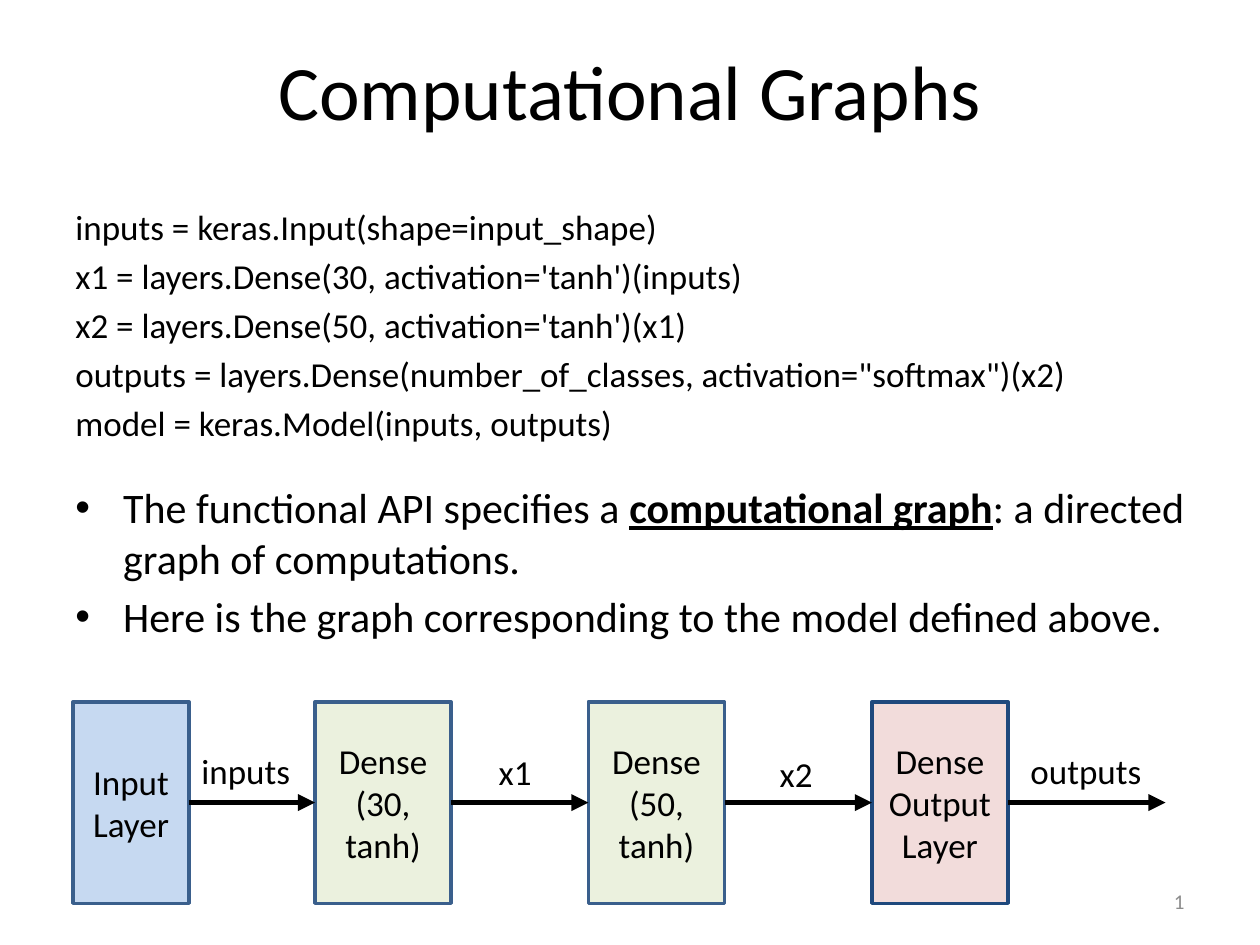
import pptx
import pptx.dml.color
import pptx.enum.shapes
import pptx.enum.text
import pptx.oxml
import pptx.oxml.ns
import pptx.util
from lxml import etree

Inches = pptx.util.Inches
Pt = pptx.util.Pt
RGBColor = pptx.dml.color.RGBColor
Align = pptx.enum.text.PP_ALIGN
Anchor = pptx.enum.text.MSO_ANCHOR
qn = pptx.oxml.ns.qn

FONT = "Calibri"
BLACK = RGBColor(0x00, 0x00, 0x00)
GRAY = RGBColor(0x8C, 0x8C, 0x8C)
BLUE = RGBColor(0xC6, 0xD9, 0xF1)
GREEN = RGBColor(0xEB, 0xF1, 0xDE)
PINK = RGBColor(0xF2, 0xDC, 0xDB)
BORDER = RGBColor(0x3A, 0x5F, 0x8C)
DARK_BORDER = RGBColor(0x1F, 0x49, 0x7D)

TITLE = "Computational Graphs"
CODE = [
    "inputs = keras.Input(shape=input_shape)",
    "x1 = layers.Dense(30, activation='tanh')(inputs)",
    "x2 = layers.Dense(50, activation='tanh')(x1)",
    'outputs = layers.Dense(number_of_classes, activation="softmax")(x2)',
    "model = keras.Model(inputs, outputs)",
]
# Each bullet is a list of (text, is key term)
BULLETS = [
    [("The functional API specifies a ", False), ("computational graph", True),
     (": a directed graph of computations.", False)],
    [("Here is the graph corresponding to the model defined above.", False)],
]
# left, width, fill, border, paragraphs (each a list of lines)
LAYERS = [
    (0.58, 0.92, BLUE, BORDER, [["Input Layer"]]),
    (2.5, 1.08, GREEN, BORDER, [["Dense (30, tanh)"]]),
    (4.67, 1.08, GREEN, BORDER, [["Dense (50, tanh)"]]),
    (6.92, 1.08, PINK, DARK_BORDER, [["Dense", "Output"], ["Layer"]]),
]
LAYER_TOP, LAYER_HEIGHT = 5.57, 1.6
ARROW_Y = LAYER_TOP + LAYER_HEIGHT / 2
LAST_ARROW_END = 9.25
# text, left, top, width of the label above each arrow
ARROW_LABELS = [
    ("inputs", 1.5, 5.9, 0.91),
    ("x1", 3.86, 5.91, 0.46),
    ("x2", 6.09, 5.92, 0.46),
    ("outputs", 8.08, 5.9, 1.09),
]
LABEL_HEIGHT = 0.44


def style(font, size, color=BLACK):
    font.name = FONT
    font.size = Pt(size)
    font.color.rgb = color


def add_run(paragraph, text, size):
    run = paragraph.add_run()
    run.text = text
    style(run.font, size)
    return run


def next_paragraph(frame, index):
    return frame.paragraphs[0] if index == 0 else frame.add_paragraph()


def add_text_box(slide, left, top, width, height, wrap=True):
    box = slide.shapes.add_textbox(*map(Inches, (left, top, width, height)))
    box.text_frame.word_wrap = wrap
    return box.text_frame


def add_bullet(paragraph):
    properties = paragraph._p.get_or_add_pPr()
    properties.set("marL", str(Inches(0.38)))
    properties.set("indent", str(-Inches(0.38)))
    etree.SubElement(properties, qn("a:buFont")).set("typeface", "Arial")
    etree.SubElement(properties, qn("a:buChar")).set("char", "•")


def add_body(slide):
    frame = add_text_box(slide, 0.5, 1.58, 9.17, 3.33)
    for index, line in enumerate(CODE):
        paragraph = next_paragraph(frame, index)
        paragraph.space_before = Pt(4)
        add_run(paragraph, line, 20)
    for index, pieces in enumerate(BULLETS):
        paragraph = frame.add_paragraph()
        paragraph.space_before = Pt(22 if index == 0 else 4.8)
        add_bullet(paragraph)
        for text, is_key_term in pieces:
            run = add_run(paragraph, text, 24)
            run.font.bold = run.font.underline = is_key_term


def add_layer(slide, left, width, fill, border, paragraphs):
    box = slide.shapes.add_shape(
        pptx.enum.shapes.MSO_SHAPE.RECTANGLE,
        *map(Inches, (left, LAYER_TOP, width, LAYER_HEIGHT)))
    box.shadow.inherit = False
    box.fill.solid()
    box.fill.fore_color.rgb = fill
    box.line.color.rgb = border
    box.line.width = Pt(2)
    frame = box.text_frame
    frame.word_wrap = True
    frame.vertical_anchor = Anchor.MIDDLE
    for index, lines in enumerate(paragraphs):
        paragraph = next_paragraph(frame, index)
        paragraph.alignment = Align.CENTER
        for number, line in enumerate(lines):
            if number:
                paragraph.add_line_break()
            add_run(paragraph, line, 20)
    return box


def add_arrow(slide, source, target):
    """Join two layers, or lead out of the last one if target is None."""
    end_x = target.left if target else Inches(LAST_ARROW_END)
    arrow = slide.shapes.add_connector(
        pptx.enum.shapes.MSO_CONNECTOR.STRAIGHT,
        source.left + source.width, Inches(ARROW_Y), end_x, Inches(ARROW_Y))
    arrow.begin_connect(source, 3)
    if target:
        arrow.end_connect(target, 1)
    arrow.line.color.rgb = BLACK
    arrow.line.width = Pt(3.25)
    line = arrow.line._get_or_add_ln()
    etree.SubElement(line, qn("a:tailEnd")).set("type", "triangle")
    etree.SubElement(arrow._element.spPr, qn("a:effectLst"))


def add_slide_number(slide):
    frame = add_text_box(slide, 7.17, 6.95, 2.33, 0.4)
    frame.vertical_anchor = Anchor.MIDDLE
    paragraph = frame.paragraphs[0]
    paragraph.alignment = Align.RIGHT
    run = paragraph.add_run()
    run.text = "4"
    style(run.font, 12, GRAY)
    # Turn the run into a slide number field
    run._r.tag = qn("a:fld")
    run._r.set("id", "{B6F15528-21DE-4FAA-801E-634DDDAF4B2B}")
    run._r.set("type", "slidenum")


def main():
    presentation = pptx.Presentation()
    presentation.slide_width = Inches(10)
    presentation.slide_height = Inches(7.5)
    slide = presentation.slides.add_slide(presentation.slide_layouts[5])

    title = slide.shapes.title
    title.left, title.top, title.width, title.height = map(
        Inches, (0.5, 0.17, 9, 1.08))
    title.text_frame.vertical_anchor = Anchor.MIDDLE
    paragraph = title.text_frame.paragraphs[0]
    paragraph.alignment = Align.CENTER
    add_run(paragraph, TITLE, 44)

    add_body(slide)
    add_slide_number(slide)
    boxes = [add_layer(slide, *layer) for layer in LAYERS]
    for source, target in zip(boxes, boxes[1:] + [None]):
        add_arrow(slide, source, target)
    for text, left, top, width in ARROW_LABELS:
        frame = add_text_box(slide, left, top, width, LABEL_HEIGHT, wrap=False)
        add_run(frame.paragraphs[0], text, 20)

    presentation.save("out.pptx")


if __name__ == "__main__":
    main()
